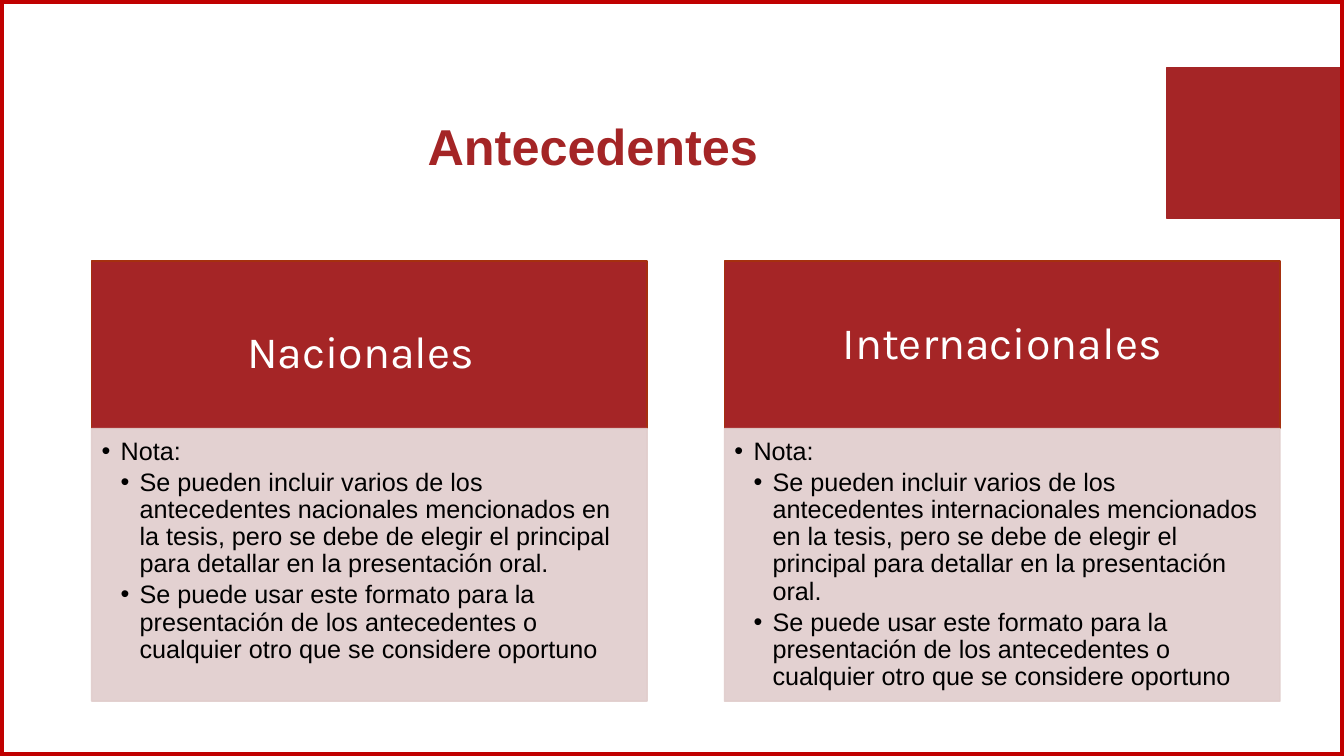
from pptx import Presentation
from pptx.dml.color import RGBColor
from pptx.enum.shapes import MSO_SHAPE as Shape
from pptx.enum.text import MSO_ANCHOR as Anchor, PP_ALIGN as Align
from pptx.oxml.ns import qn
from pptx.util import Cm, Pt
from lxml.etree import SubElement

WINE = RGBColor(0xA5, 0x25, 0x26)
TITLE = RGBColor(0xA4, 0x25, 0x26)
RUST = RGBColor(0xA5, 0x30, 0x0F)
PINK = RGBColor(0xE1, 0xCD, 0xCC)
FRAME = RGBColor(0xC0, 0x00, 0x00)
WHITE = RGBColor(0xFF, 0xFF, 0xFF)
BLACK = RGBColor(0x00, 0x00, 0x00)

WIDTH, HEIGHT = 33.87, 19.05
CARD_W, HEAD_TOP, BODY_TOP, BODY_H = 14, 6.58, 10.8, 6.87
STEP = 0.48

# Heading runs, then the word used in the note
CARDS = [
    (2.31, [("Nacionales", 32), (" ", 52)], "nacionales"),
    (18.26, [("Internacionales", 32)], "internacionales"),
]
NOTE = ("Se pueden incluir varios de los antecedentes {} mencionados en la tesis, "
        "pero se debe de elegir el principal para detallar en la presentación oral.")
USE = ("Se puede usar este formato para la presentación de los antecedentes "
       "o cualquier otro que se considere oportuno")


def add_rect(slide, box, fill, line, weight=1):
    rect = slide.shapes.add_shape(Shape.RECTANGLE, *[Cm(n) for n in box])
    rect.shadow.inherit = False
    if fill is None:
        rect.fill.background()
    else:
        rect.fill.solid()
        rect.fill.fore_color.rgb = fill
    rect.line.color.rgb = line
    rect.line.width = Pt(weight)
    return rect


def fade(shape, share):
    """Set the opacity of fill and line, in percent."""
    for color in shape._element.spPr.iter(qn("a:srgbClr")):
        SubElement(color, qn("a:alpha"), val=str(share * 1000))


def set_frame(shape, anchor, left, top, right, bottom):
    frame = shape.text_frame
    frame.word_wrap = True
    frame.vertical_anchor = anchor
    frame.margin_left, frame.margin_right = Cm(left), Cm(right)
    frame.margin_top, frame.margin_bottom = Cm(top), Cm(bottom)
    return frame


def add_run(para, text, size, font, color, bold=False):
    run = para.add_run()
    run.text = text
    run.font.size = Pt(size)
    run.font.name = font
    run.font.bold = bold
    run.font.color.rgb = color


def add_bullet(para, level):
    para.level = level - 1
    props = para._p.get_or_add_pPr()
    props.set("marL", str(Cm(STEP * level)))
    props.set("indent", str(-Cm(STEP)))
    SubElement(props, qn("a:buFont"), typeface="Arial")
    SubElement(props, qn("a:buChar"), char="•")


def add_title(slide, text):
    title = slide.shapes.title
    title.left, title.top = Cm(0.97), Cm(1.52)
    title.width, title.height = Cm(27.94), Cm(3.05)
    frame = set_frame(title, Anchor.BOTTOM, 0.25, 0.13, 0.25, 0.13)
    para = frame.paragraphs[0]
    para.alignment = Align.CENTER
    para.line_spacing = 0.9
    add_run(para, text, 36, "Arial", TITLE, True)


def add_head(slide, left, runs):
    box = (left, HEAD_TOP, CARD_W, BODY_TOP - HEAD_TOP)
    head = add_rect(slide, box, WINE, RUST)
    para = set_frame(head, Anchor.MIDDLE, 0.64, 0.36, 0.64, 0.36).paragraphs[0]
    para.alignment = Align.CENTER
    para.line_spacing = 0.9
    for text, size in runs:
        add_run(para, text, size, "Karla", WHITE)


def add_body(slide, left, items):
    body = add_rect(slide, (left, BODY_TOP, CARD_W, BODY_H), PINK, PINK)
    fade(body, 90)
    frame = set_frame(body, Anchor.TOP, 0.25, 0.25, 0.36, 0.41)
    for i, (level, text) in enumerate(items):
        para = frame.add_paragraph() if i else frame.paragraphs[0]
        add_bullet(para, level)
        para.alignment = Align.LEFT
        para.line_spacing = 0.9
        para.space_after = Pt(2.7)
        add_run(para, text, 18, "Arial", BLACK)


def main():
    prs = Presentation()
    prs.slide_width, prs.slide_height = Cm(WIDTH), Cm(HEIGHT)
    slide = prs.slides.add_slide(prs.slide_layouts[5])
    add_title(slide, "Antecedentes")
    add_rect(slide, (29.41, 1.7, WIDTH - 29.41, 3.81), WINE, TITLE)
    add_rect(slide, (0, 0, WIDTH, HEIGHT), None, FRAME, 6)
    for left, runs, word in CARDS:
        add_head(slide, left, runs)
        add_body(slide, left, [(1, "Nota:"), (2, NOTE.format(word)), (2, USE)])
    prs.save("out.pptx")


if __name__ == "__main__":
    main()
